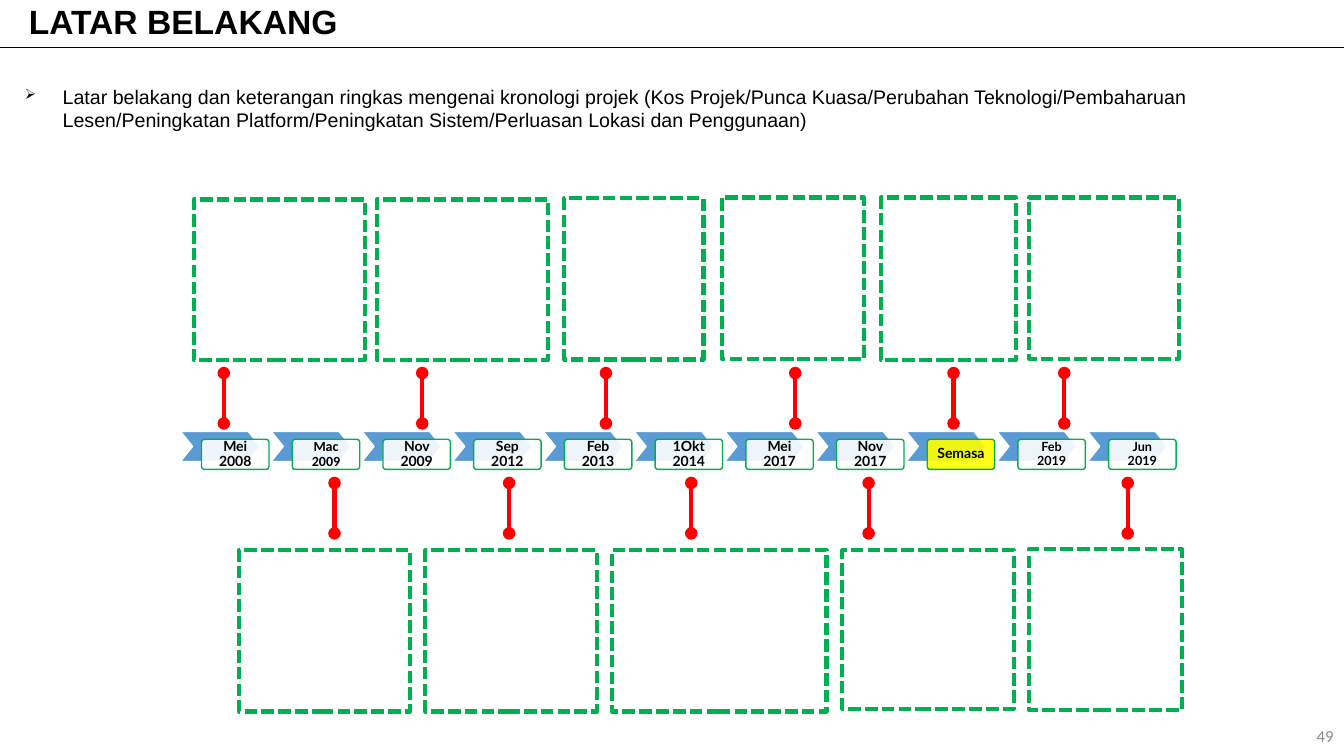
from lxml.etree import SubElement as add_node
from pptx import Presentation
from pptx.dml.color import RGBColor
from pptx.enum.dml import MSO_LINE as Dash
from pptx.enum.shapes import MSO_CONNECTOR as Link, MSO_SHAPE as Shape
from pptx.enum.text import MSO_ANCHOR as Anchor, PP_ALIGN as Align
from pptx.oxml.ns import qn
from pptx.util import Cm, Pt

BLACK = RGBColor(0, 0, 0)
WHITE = RGBColor(255, 255, 255)
BLUE = RGBColor(0x5B, 0x9B, 0xD5)
GREEN = RGBColor(0, 0xB0, 0x50)
RED = RGBColor(255, 0, 0)
YELLOW = RGBColor(255, 255, 0)
GREY = RGBColor(0x8C, 0x8C, 0x8C)

DATES = [
    ("Mei 2008", "Lato", 10), ("Mac 2009", "Calibri", 10),
    ("Nov 2009", "Lato", 10), ("Sep 2012", "Lato", 10),
    ("Feb 2013", "Lato", 10), ("1Okt 2014", "Lato", 10),
    ("Mei 2017", "Lato", 10), ("Nov 2017", "Lato", 10),
    ("Semasa", "Lato", 10), ("Feb 2019", "Lato", 9),
    ("Jun 2019", "Lato", 9),
]
START, SPAN = 4.55, 22.86
PIN_ROWS = [
    (9.4, [5.64, 10.64, 15.27, 20.04, 24.03, 26.82]),
    (12.17, [8.43, 12.83, 17.42, 21.89, 28.42]),
]
PIN_LENGTH = 1.27
FRAMES = [
    (4.88, 5.03, 4.32, 4.04), (9.5, 5.03, 4.32, 4.04),
    (14.22, 5, 3.51, 4.06), (18.19, 4.98, 3.58, 4.06),
    (22.2, 4.98, 3.4, 4.09), (25.93, 4.98, 3.78, 4.06),
    (6.02, 13.87, 4.32, 4.06), (10.72, 13.87, 4.32, 4.06),
    (15.42, 13.87, 5.41, 4.06), (21.23, 13.87, 4.32, 3.99),
    (25.93, 13.84, 3.86, 4.06),
]
BODY = (
    "Latar belakang dan keterangan ringkas mengenai kronologi projek "
    "(Kos Projek/Punca Kuasa/Perubahan Teknologi/Pembaharuan "
    "Lesen/Peningkatan Platform/Peningkatan Sistem/Perluasan Lokasi "
    "dan Penggunaan)"
)


def add_form(shapes, kind, box, fill, line, width):
    form = shapes.add_shape(kind, *map(Cm, box))
    form.shadow.inherit = False
    if fill is None:
        form.fill.background()
    else:
        form.fill.solid()
        form.fill.fore_color.rgb = fill
    form.line.color.rgb = line
    form.line.width = Pt(width)
    return form


def set_text(form, text, font, size, color=BLACK, bold=False,
             align=Align.LEFT, anchor=Anchor.MIDDLE):
    frame = form.text_frame
    frame.text = text
    frame.word_wrap = True
    frame.vertical_anchor = anchor
    para = frame.paragraphs[0]
    para.alignment = align
    style = para.runs[0].font
    style.name, style.size, style.bold = font, Pt(size), bold
    style.color.rgb = color
    return para


def add_label(slide, box, *args, **style):
    return set_text(slide.shapes.add_textbox(*map(Cm, box)), *args, **style)


def set_indent(para, left, first):
    props = para._p.get_or_add_pPr()
    props.set("marL", str(Cm(left)))
    props.set("indent", str(Cm(first)))
    return props


def add_bullet(para):
    props = set_indent(para, 0.95, -0.95)
    color = add_node(props, qn("a:buClr"))
    add_node(color, qn("a:srgbClr"), val=str(BLACK))
    add_node(props, qn("a:buSzPct"), val="73000")
    add_node(props, qn("a:buChar"), char="➢")


def add_date(shapes, left, text, font, size):
    arrow = add_form(shapes, Shape.CHEVRON, (left, 10.87, 2.01, 0.76),
                     BLUE, WHITE, 1)
    arrow.adjustments[0] = 0.4
    fill = YELLOW if text == "Semasa" else WHITE
    badge = add_form(shapes, Shape.ROUNDED_RECTANGLE,
                     (left + 0.53, 11.07, 1.7, 0.76), fill, GREEN, 1)
    badge.adjustments[0] = 0.1
    color = badge.element.spPr.find(qn("a:solidFill"))[0]
    add_node(color, qn("a:alpha"), val="90000")
    frame = badge.text_frame
    frame.margin_left = frame.margin_right = Cm(0.2)
    frame.margin_top = frame.margin_bottom = Cm(0.2)
    para = set_text(badge, text, font, size, bold=True, align=Align.CENTER)
    para.line_spacing = 0.9


def add_pin(slide, left, top):
    pin = slide.shapes.add_connector(
        Link.STRAIGHT, Cm(left), Cm(top), Cm(left), Cm(top + PIN_LENGTH))
    pin.line.color.rgb = RED
    pin.line.width = Pt(3)
    props = pin.element.spPr
    for end in ("a:headEnd", "a:tailEnd"):
        add_node(props.find(qn("a:ln")), qn(end), type="oval")
    add_node(props, qn("a:effectLst"))


def add_title(slide):
    bar = add_form(slide.shapes, Shape.RECTANGLE, (0, 0, 33.9, 1.19),
                   None, BLACK, 0.75)
    para = set_text(bar, "LATAR BELAKANG", "Arial", 24, bold=True)
    para.line_spacing = 0.9
    set_indent(para, 0.48, 0)


def main():
    deck = Presentation()
    deck.slide_width, deck.slide_height = Cm(33.87), Cm(19.05)
    slide = deck.slides.add_slide(deck.slide_layouts[6])

    group = slide.shapes.add_group_shape()
    step = SPAN / (len(DATES) - 1)
    for index, date in enumerate(DATES):
        add_date(group.shapes, START + index * step, *date)

    for top, lefts in PIN_ROWS:
        for left in lefts:
            add_pin(slide, left, top)

    for box in FRAMES:
        frame = add_form(slide.shapes, Shape.RECTANGLE, box, None, GREEN, 3)
        frame.line.dash_style = Dash.SQUARE_DOT

    add_title(slide)
    add_bullet(add_label(slide, (0.38, 2.01, 33.02, 16.66), BODY,
                         "Arial", 14, anchor=Anchor.TOP))
    add_label(slide, (26.24, 18.03, 7.62, 1.02), "49", "Calibri", 12,
              color=GREY, align=Align.RIGHT)
    deck.save("out.pptx")


if __name__ == "__main__":
    main()
